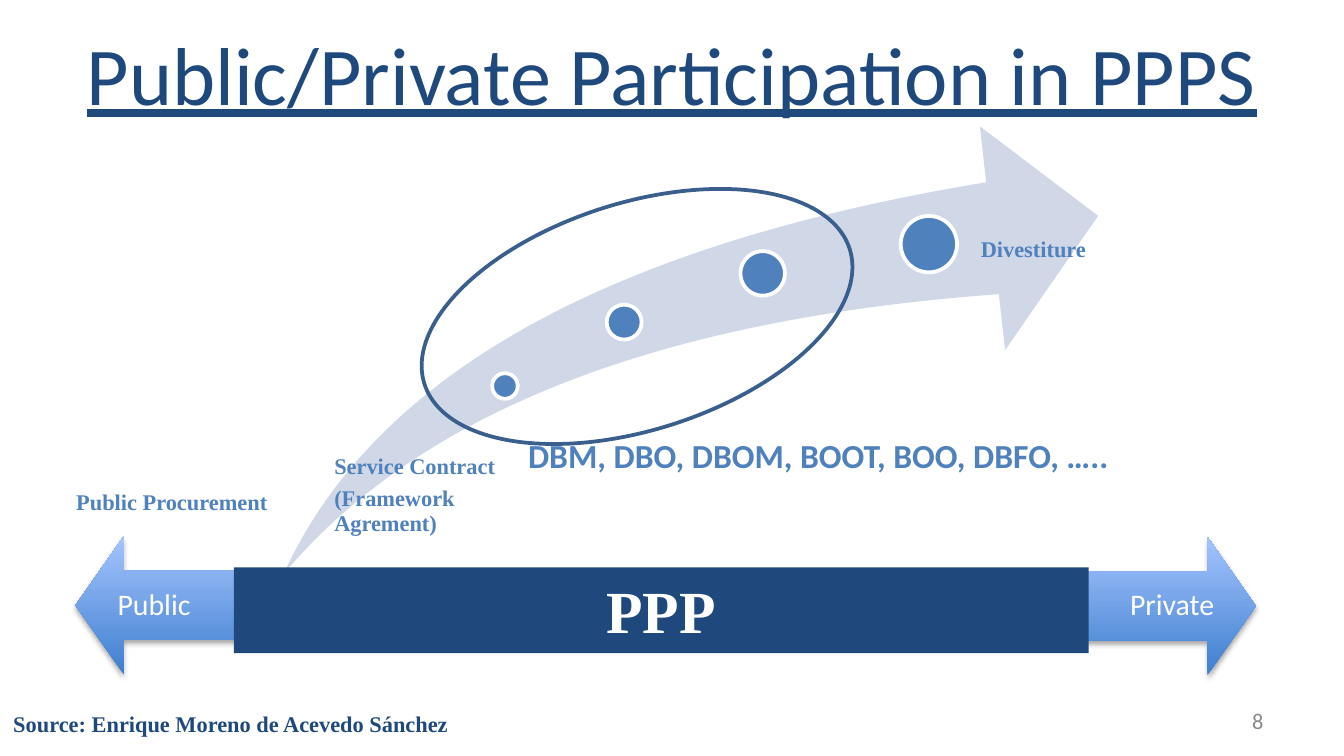
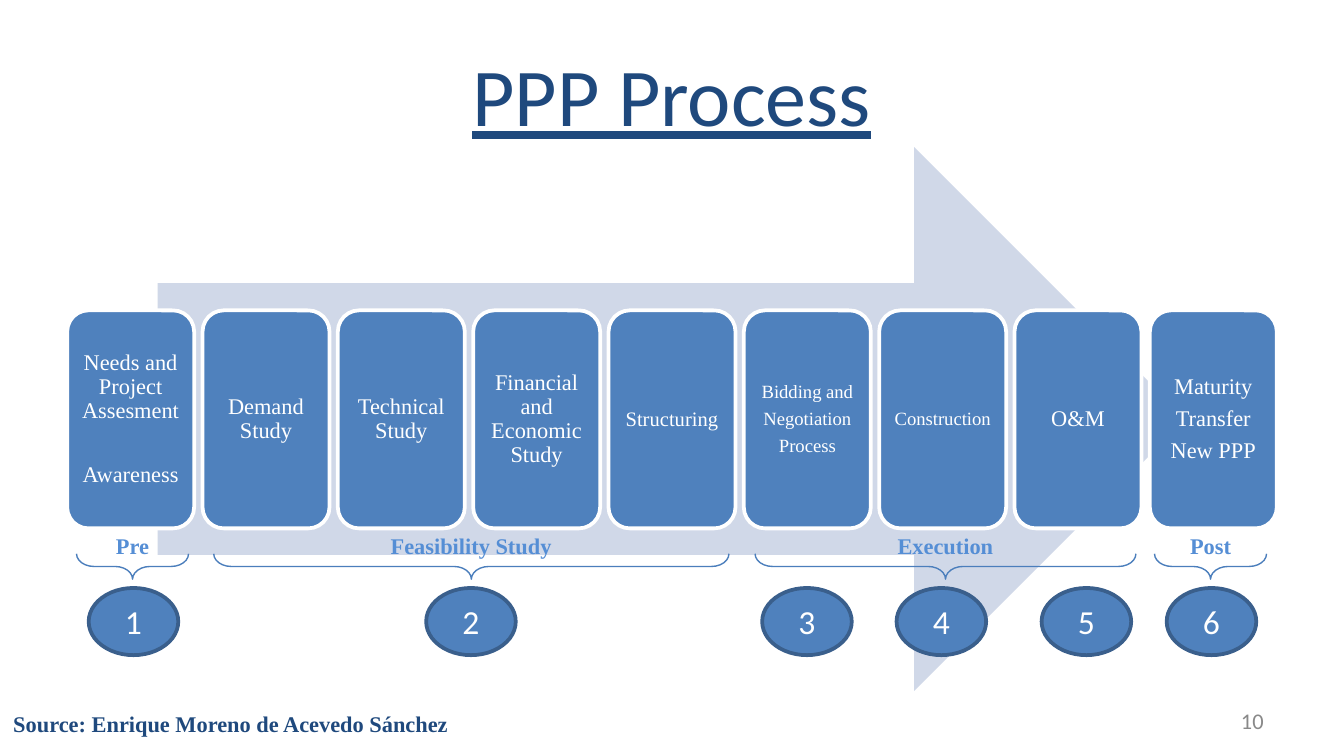
from lxml.etree import SubElement
from pptx import Presentation
from pptx.dml.color import RGBColor
from pptx.enum.shapes import MSO_SHAPE
from pptx.enum.text import MSO_ANCHOR, PP_ALIGN
from pptx.oxml.ns import qn
from pptx.util import Pt

NAVY = RGBColor(0x1F, 0x49, 0x7D)
BLUE = RGBColor(0x4F, 0x81, 0xBD)
EDGE_BLUE = RGBColor(0x3A, 0x5F, 0x8C)
BRACE_BLUE = RGBColor(0x4B, 0x7E, 0xBC)
LABEL_BLUE = RGBColor(0x55, 0x8E, 0xD5)
PALE_BLUE = RGBColor(0xD0, 0xD8, 0xE8)
DEEP_SKY = RGBColor(0x3F, 0x7F, 0xCE)
LIGHT_SKY = RGBColor(0xA4, 0xC4, 0xFF)
GRAY = RGBColor(0x89, 0x89, 0x89)
WHITE = RGBColor(0xFF, 0xFF, 0xFF)

SANS, SERIF = "Calibri", "Times New Roman"
SOURCE = "Source: Enrique Moreno de Acevedo Sánchez"
DEFAULT_INSETS = (7.2, 3.6, 7.2, 3.6)


class Deck:
    def __init__(self):
        self.presentation = Presentation()
        self.presentation.slide_width = Pt(720)
        self.presentation.slide_height = Pt(405)
        self.slide = None

    def new_slide(self, title, title_top, number):
        layout = self.presentation.slide_layouts[6]
        self.slide = self.presentation.slides.add_slide(layout)
        self.text((36, title_top, 648, 67.5), title, 44, NAVY, underline=True,
                  align=PP_ALIGN.CENTER, anchor=MSO_ANCHOR.MIDDLE)
        self.text((0, 377, 250, 21.8), SOURCE, 12, NAVY, SERIF, bold=True, wrap=False)
        self.text((516, 375.4, 168, 21.6), number, 12, GRAY,
                  align=PP_ALIGN.RIGHT, anchor=MSO_ANCHOR.MIDDLE)

    def fill_text(self, shape, text, size, color, font=SANS, bold=False, underline=False,
                  align=PP_ALIGN.LEFT, anchor=MSO_ANCHOR.TOP, insets=DEFAULT_INSETS,
                  wrap=True, tight=False):
        """Fill a shape with text, one paragraph a line; tight sets diagram spacing."""
        frame = shape.text_frame
        frame.text = text
        frame.word_wrap = wrap
        frame.vertical_anchor = anchor
        (frame.margin_left, frame.margin_top,
         frame.margin_right, frame.margin_bottom) = map(Pt, insets)
        for paragraph in frame.paragraphs:
            paragraph.alignment = align
            if tight:
                paragraph.line_spacing = 0.9
                paragraph.space_after = Pt(size * 0.35)
            for run in paragraph.runs:
                run.font.name = font
                run.font.size = Pt(size)
                run.font.bold = bold
                run.font.underline = underline
                run.font.color.rgb = color

    def text(self, box, text, size, color, font=SANS, **style):
        self.fill_text(self.slide.shapes.add_textbox(*map(Pt, box)),
                       text, size, color, font, **style)

    def shape(self, kind, box, fill=None, line=None, line_width=2.0,
              rotation=0, adjustments=()):
        shape = self.slide.shapes.add_shape(kind, *map(Pt, box))
        shape.shadow.inherit = False
        shape.rotation = rotation
        for index, value in enumerate(adjustments):
            shape.adjustments[index] = value
        if fill is None:
            shape.fill.background()
        else:
            shape.fill.solid()
            shape.fill.fore_color.rgb = fill
        if line is None:
            shape.line.fill.background()
        else:
            shape.line.color.rgb = line
            shape.line.width = Pt(line_width)
        return shape

    def sector_arrow(self, box, rotation):
        """Turned block arrow, light at the top whatever its rotation, with a soft shadow."""
        arrow = self.shape(MSO_SHAPE.UP_ARROW, box, rotation=rotation,
                           adjustments=(0.5, 0.35))
        arrow.fill.gradient()
        arrow.fill.gradient_angle = 90
        for stop, color in zip(arrow.fill.gradient_stops, (DEEP_SKY, LIGHT_SKY)):
            stop.color.rgb = color
        properties = arrow._element.spPr
        properties.find(qn("a:gradFill")).set("rotWithShape", "0")
        shadow = SubElement(properties.find(qn("a:effectLst")), qn("a:outerShdw"),
                            blurRad=str(Pt(3.1)), dist=str(Pt(1.8)),
                            dir="5400000", rotWithShape="0")
        shade = SubElement(shadow, qn("a:srgbClr"), val="000000")
        SubElement(shade, qn("a:alpha"), val="35000")

    def dot(self, center_x, center_y, diameter):
        self.shape(MSO_SHAPE.OVAL, (center_x - diameter / 2, center_y - diameter / 2,
                                    diameter, diameter), BLUE, WHITE)

    def card(self, left, text, size):
        card = self.shape(MSO_SHAPE.ROUNDED_RECTANGLE, (left, 166.3, 68, 116.8),
                          BLUE, WHITE)
        self.fill_text(card, text, size, WHITE, SERIF, align=PP_ALIGN.CENTER,
                       anchor=MSO_ANCHOR.MIDDLE, insets=(3.3,) * 4, tight=True)
        return card

    def phase(self, center, length, name, name_width):
        """Brace under a group of cards, with the name of the phase above it."""
        self.shape(MSO_SHAPE.RIGHT_BRACE, (center - 6.8, 303.5 - length / 2, 13.6, length),
                   line=BRACE_BLUE, line_width=0.75, rotation=90,
                   adjustments=(0.689, 0.5))
        self.text((center - name_width / 2, 281.5, name_width, 21.8), name, 12,
                  LABEL_BLUE, SERIF, bold=True, align=PP_ALIGN.CENTER, wrap=False)

    def step(self, center, number):
        circle = self.shape(MSO_SHAPE.OVAL, (center - 24, 315, 48, 36), BLUE, EDGE_BLUE)
        self.fill_text(circle, str(number), 18, WHITE, align=PP_ALIGN.CENTER,
                       anchor=MSO_ANCHOR.MIDDLE)


def build_participation(deck):
    deck.new_slide("Public/Private Participation in PPPS", 5, "8")

    sector_style = dict(anchor=MSO_ANCHOR.MIDDLE, insets=(9,) * 4, tight=True)
    deck.sector_arrow((136.8, 190.8, 74.2, 267), 270)
    deck.text((54, 306, 254, 37.4), "Public", 16, WHITE, **sector_style)
    deck.sector_arrow((509, 198, 74.2, 253.4), 90)
    deck.text((419, 306, 240.5, 37.4), "Private", 16, WHITE,
              align=PP_ALIGN.RIGHT, **sector_style)

    deck.shape(MSO_SHAPE.SWOOSH_ARROW, (152, 67.7, 436.3, 239.8), PALE_BLUE,
               adjustments=(0.25, 0.25))
    deck.text((174.5, 244, 97, 27.4), "Service Contract\n(Framework Agrement)", 12,
              BLUE, SERIF, bold=True, insets=(4.6, 0, 0, 0), tight=True)
    deck.text((515.5, 127.5, 150.5, 16), "Divestiture", 12, BLUE, SERIF,
              bold=True, insets=(9.9, 0, 0, 0), tight=True)
    for center_x, center_y, diameter in ((270.5, 206.8, 13.7), (334.4, 172.6, 18.7),
                                         (408.6, 146.5, 23.8), (497.6, 130.8, 30.2)):
        deck.dot(center_x, center_y, diameter)

    deck.text((33.8, 258, 138, 21.8), "Public Procurement", 12, BLUE, SERIF, bold=True)
    ppp = deck.shape(MSO_SHAPE.RECTANGLE, (125.3, 304, 458, 46), NAVY)
    deck.fill_text(ppp, "PPP", 32, WHITE, SERIF, bold=True, align=PP_ALIGN.CENTER)
    deck.shape(MSO_SHAPE.OVAL, (221.8, 108.7, 239, 121.7), line=EDGE_BLUE, rotation=342.4)
    deck.text((275.8, 229.7, 336, 29), "DBM, DBO, DBOM, BOOT, BOO, DBFO, …..",
              18, BLUE, bold=True)


def build_process(deck):
    deck.new_slide("PPP Process", 16.5, "10")
    deck.shape(MSO_SHAPE.RIGHT_ARROW, (84.5, 78.8, 551, 291.4), PALE_BLUE)

    stages = (
        ("Needs and Project Assesment\nAwareness", 12),
        ("Demand Study", 12),
        ("Technical Study", 12),
        ("Financial and Economic Study", 12),
        ("Structuring", 11),
        ("Bidding and\nNegotiation\nProcess", 10),
        ("Construction", 10),
        ("O&M", 12),
        ("Maturity\nTransfer\nNew PPP", 12),
    )
    cards = [deck.card(36 + 72.5 * index, text, size)
             for index, (text, size) in enumerate(stages)]
    cards[0].text_frame.paragraphs[1].space_before = Pt(17)

    for number, center in enumerate((71.5, 252.3, 432.3, 504.3, 582, 649), start=1):
        deck.step(center, number)
    for center, length, name, name_width in ((71, 60, "Pre", 32),
                                             (252.5, 276, "Feasibility Study", 102),
                                             (506.5, 204, "Execution", 67),
                                             (648.5, 60, "Post", 37)):
        deck.phase(center, length, name, name_width)


def main():
    deck = Deck()
    build_participation(deck)
    build_process(deck)
    deck.presentation.save("out.pptx")


if __name__ == "__main__":
    main()
